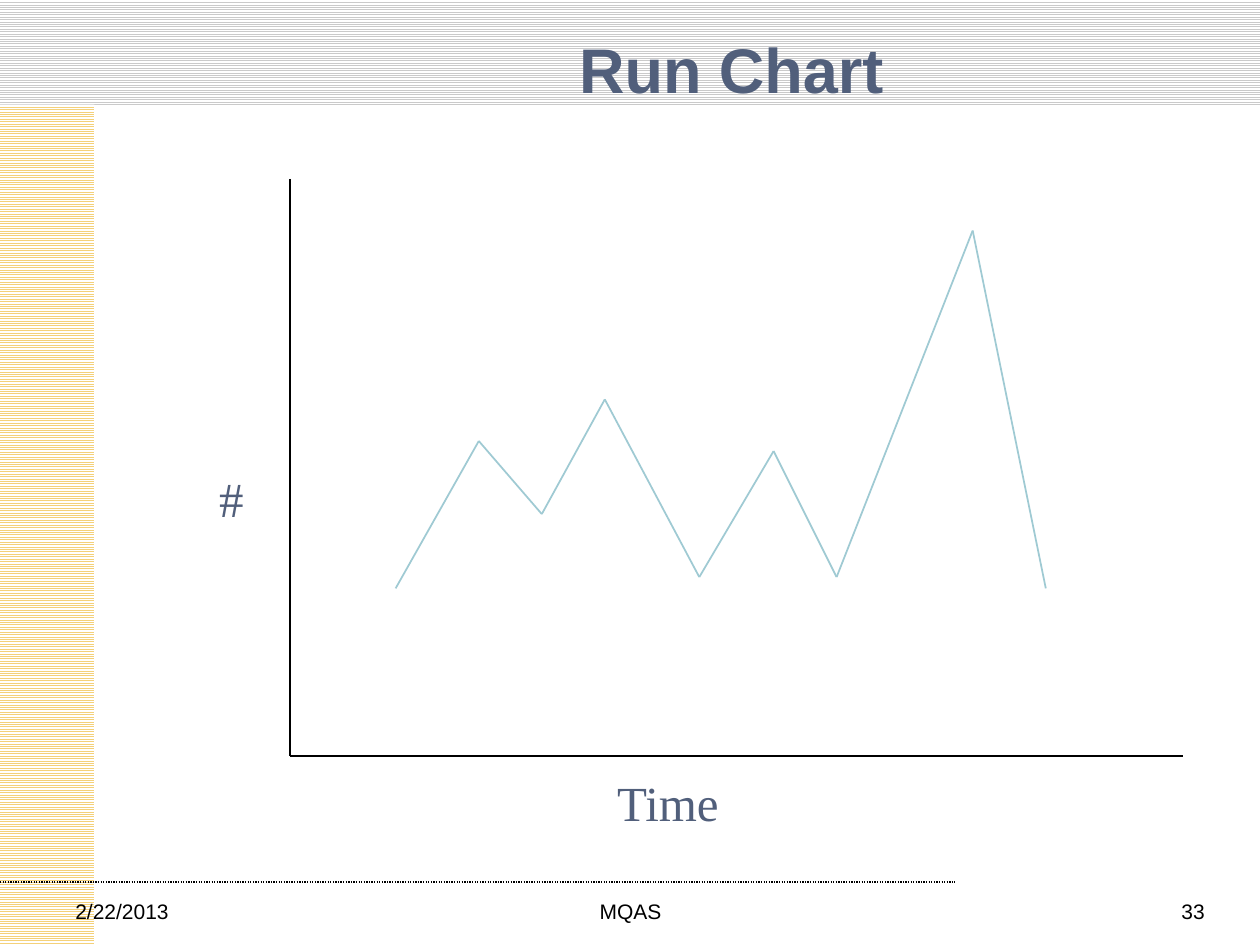
from dataclasses import dataclass
from itertools import pairwise

from lxml import etree
from pptx import Presentation
from pptx.dml.color import RGBColor
from pptx.enum.dml import MSO_LINE, MSO_PATTERN
from pptx.enum.shapes import MSO_CONNECTOR, MSO_SHAPE
from pptx.enum.text import MSO_ANCHOR, PP_ALIGN
from pptx.oxml.ns import qn
from pptx.util import Inches, Pt

STRAIGHT = MSO_CONNECTOR.STRAIGHT
RECTANGLE = MSO_SHAPE.RECTANGLE
STRIPES = MSO_PATTERN.LIGHT_HORIZONTAL
DOTTED = MSO_LINE.ROUND_DOT
LEFT, CENTER, RIGHT = PP_ALIGN.LEFT, PP_ALIGN.CENTER, PP_ALIGN.RIGHT
TOP, MIDDLE = MSO_ANCHOR.TOP, MSO_ANCHOR.MIDDLE


@dataclass(frozen=True)
class Theme:
    sans: str = "Arial"
    serif: str = "Times New Roman"
    ink: str = "000000"
    paper: str = "FFFFFF"
    heading: str = "515F7B"
    series: str = "9FCAD3"
    grey_stripe: str = "CACACA"
    gold_stripe: str = "F4D17A"
    title_size: int = 36
    label_size: int = 28
    footer_size: int = 12


THEME = Theme()


def rgb(color):
    return RGBColor.from_string(color)


def add_band(page, box, color):
    band = page.shapes.add_shape(RECTANGLE, *map(Inches, box))
    band.shadow.inherit = False
    band.line.fill.background()
    band.fill.patterned()
    band.fill.pattern = STRIPES
    band.fill.fore_color.rgb = rgb(color)
    band.fill.back_color.rgb = rgb(THEME.paper)


def add_line(page, start, end, color, width=1.0):
    line = page.shapes.add_connector(STRAIGHT, *map(Inches, (*start, *end)))
    etree.SubElement(line._element.spPr, qn("a:effectLst"))
    line.line.color.rgb = rgb(color)
    line.line.width = Pt(width)
    return line


def add_text(page, box, text, size, font, color, align=LEFT, anchor=TOP, bold=False):
    frame = page.shapes.add_textbox(*map(Inches, box)).text_frame
    frame.word_wrap = True
    frame.vertical_anchor = anchor
    para = frame.paragraphs[0]
    para.alignment = align
    span = para.add_run()
    span.text = text
    span.font.size = Pt(size)
    span.font.name = font
    span.font.bold = bold
    span.font.color.rgb = rgb(color)


def add_backdrop(page, box):
    """Striped bands along the top and the left side."""
    left, top, width, height = box
    band_height, band_width = 0.83, 0.75
    add_band(page, (left, top, width, band_height), THEME.grey_stripe)
    add_band(page, (left, top + band_height, band_width, height - band_height),
             THEME.gold_stripe)


def add_footer(page, box):
    """Dotted rule with date, footer text and page number below it."""
    left, top, width, _ = box
    rule = add_line(page, (left, top), (left + width, top), THEME.ink, 0.75)
    rule.line.dash_style = DOTTED
    for offset, item_width, text, align in (
        (0.5, 2.33, "2/22/2013", LEFT),
        (3.42, 3.17, "MQAS", CENTER),
        (7.33, 2.33, "33", RIGHT),
    ):
        add_text(page, (left + offset, top + 0.08, item_width, 0.27), text,
                 THEME.footer_size, THEME.sans, THEME.ink, align)


def add_title(page, box):
    add_text(page, box, "Run Chart", THEME.title_size, THEME.sans,
             THEME.heading, CENTER, MIDDLE, bold=True)


def add_run_chart(page, box):
    """Two axes, their labels and the run of points, measured from the origin."""
    left, top, width, height = box
    bottom = top + height
    origin = (left, bottom)
    add_line(page, (left, top), origin, THEME.ink)
    add_line(page, origin, (left + width, bottom), THEME.ink)

    # Distance along the time axis and height above it
    readings = [(0.84, 1.33), (1.5, 2.5), (2, 1.92), (2.5, 2.83), (3.25, 1.42),
                (3.84, 2.42), (4.34, 1.42), (5.42, 4.17), (6, 1.33)]
    points = [(left + along, bottom - rise) for along, rise in readings]
    for start, end in pairwise(points):
        add_line(page, start, end, THEME.series)

    # Axis labels
    for label_box, text in (
        ((left + 2.5, bottom + 0.08, 1.33, 0.57), "Time"),
        ((left - 0.66, bottom - 2.33, 0.42, 0.57), "#"),
    ):
        add_text(page, label_box, text, THEME.label_size, THEME.serif, THEME.heading)


def main():
    deck = Presentation()
    deck.slide_width, deck.slide_height = Inches(10), Inches(7.5)
    page = deck.slides.add_slide(deck.slide_layouts[6])
    add_backdrop(page, (0, 0, 10, 7.5))
    add_footer(page, (0, 7, 7.58, 0.5))
    add_title(page, (1.88, 0.17, 7.85, 0.75))
    add_run_chart(page, (2.3, 1.42, 7.09, 4.58))
    deck.save("out.pptx")


if __name__ == "__main__":
    main()
